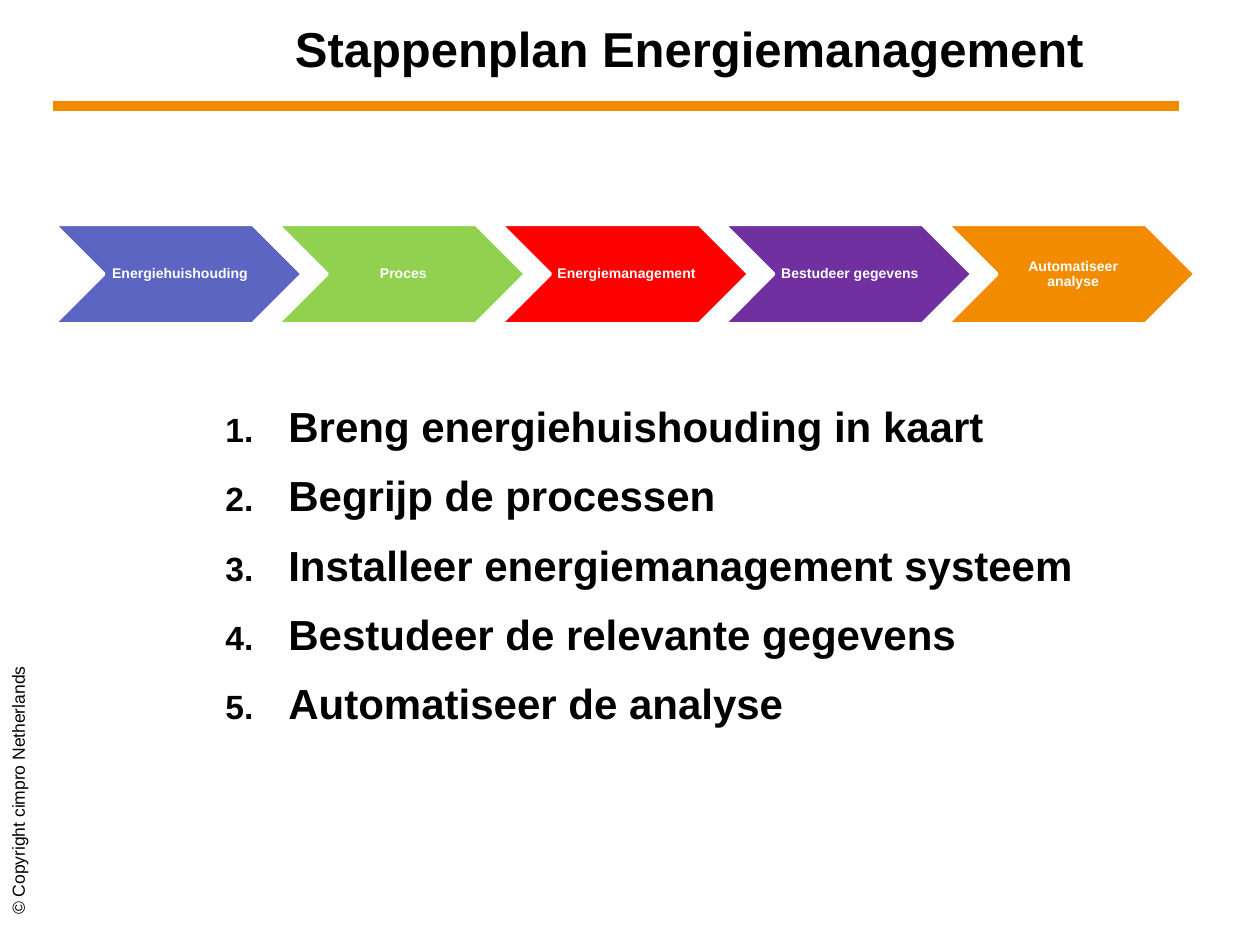
from lxml.etree import SubElement
from pptx import Presentation
from pptx.dml.color import RGBColor
from pptx.enum.shapes import MSO_CONNECTOR, MSO_SHAPE
from pptx.enum.text import MSO_ANCHOR as ANCHOR, MSO_AUTO_SIZE as AUTO_SIZE, PP_ALIGN as ALIGN
from pptx.oxml.ns import qn
from pptx.util import Inches, Pt

SLIDE_WIDTH, SLIDE_HEIGHT = Inches(10), Inches(7.5)
COLUMN, ROW = SLIDE_WIDTH / 100, SLIDE_HEIGHT / 75

BLACK = RGBColor(0x00, 0x00, 0x00)
WHITE = RGBColor(0xFF, 0xFF, 0xFF)
BLUE = RGBColor(0x5C, 0x65, 0xC2)
GREEN = RGBColor(0x92, 0xD0, 0x50)
RED = RGBColor(0xFF, 0x00, 0x00)
PURPLE = RGBColor(0x70, 0x30, 0xA0)
ORANGE = RGBColor(0xF2, 0x8B, 0x00)

PHASES = [
    ("Energiehuishouding", BLUE),
    ("Proces", GREEN),
    ("Energiemanagement", RED),
    ("Bestudeer gegevens", PURPLE),
    ("Automatiseer analyse", ORANGE),
]
STEPS = [
    "Breng energiehuishouding in kaart",
    "Begrijp de processen",
    "Installeer energiemanagement systeem",
    "Bestudeer de relevante gegevens",
    "Automatiseer de analyse",
]


def grid_box(column, row, columns, rows):
    return [round(length) for length in (column * COLUMN, row * ROW, columns * COLUMN, rows * ROW)]


def style_font(paragraph, size, color=BLACK, bold=True):
    font = paragraph.font
    font.name = "Arial"
    font.size = Pt(size)
    font.bold = bold
    font.color.rgb = color


def set_margins(text_frame, left, top, right, bottom):
    text_frame.margin_left, text_frame.margin_right = Inches(left), Inches(right)
    text_frame.margin_top, text_frame.margin_bottom = Inches(top), Inches(bottom)


def add_text(slide, box, text):
    shape = slide.shapes.add_textbox(*box)
    shape.text_frame.word_wrap = True
    shape.text_frame.text = text
    return shape


def add_rule(slide):
    left, top, width, _ = grid_box(4.2, 8.4, 89.4, 0)
    rule = slide.shapes.add_connector(MSO_CONNECTOR.STRAIGHT, left, top, left + width, top)
    rule.line.color.rgb = ORANGE
    rule.line.width = Pt(6)
    SubElement(rule._element.spPr, qn("a:effectLst"))


def add_copyright(slide):
    shape = add_text(slide, grid_box(-11.6, 59.2, 26.2, 2.8), "© Copyright cimpro Netherlands")
    shape.rotation = 270
    set_margins(shape.text_frame, 0.11, 0.05, 0.11, 0.05)
    shape.text_frame.auto_size = AUTO_SIZE.SHAPE_TO_FIT_TEXT
    style_font(shape.text_frame.paragraphs[0], 10, bold=False)


def add_title(slide):
    shape = add_text(slide, grid_box(20.8, 0.8, 67.8, 5.8), "Stappenplan Energiemanagement")
    shape.text_frame.vertical_anchor = ANCHOR.BOTTOM
    paragraph = shape.text_frame.paragraphs[0]
    paragraph.alignment = ALIGN.CENTER
    style_font(paragraph, 28)


def add_phase(slide, index, label, color):
    box = grid_box(4.3 + index * 17.72, 17.8, 19.7, 7.9)
    shape = slide.shapes.add_shape(MSO_SHAPE.CHEVRON, *box)
    shape.shadow.inherit = False
    shape.fill.solid()
    shape.fill.fore_color.rgb = color
    shape.line.color.rgb = WHITE
    shape.line.width = Pt(2)
    text_frame = shape.text_frame
    text_frame.text = label
    text_frame.word_wrap = True
    text_frame.vertical_anchor = ANCHOR.MIDDLE
    set_margins(text_frame, 0.04, 0.01, 0.01, 0.01)
    paragraph = text_frame.paragraphs[0]
    paragraph.alignment = ALIGN.CENTER
    paragraph.line_spacing = 0.9
    style_font(paragraph, 8, WHITE)


def number_paragraph(paragraph):
    properties = paragraph._p.get_or_add_pPr()
    properties.set("marL", str(Inches(0.5)))
    properties.set("indent", str(-Inches(0.5)))
    SubElement(properties, qn("a:buSzPct"), val="80000")
    SubElement(properties, qn("a:buFont"), typeface="Arial")
    SubElement(properties, qn("a:buAutoNum"), type="arabicPeriod")


def add_steps(slide):
    shape = add_text(slide, grid_box(16.9, 31.3, 70.1, 32.1), "\n".join(STEPS))
    for index, paragraph in enumerate(shape.text_frame.paragraphs):
        number_paragraph(paragraph)
        if index:
            paragraph.space_before = Pt(10.8)
        style_font(paragraph, 24)


def main():
    presentation = Presentation()
    presentation.slide_width, presentation.slide_height = SLIDE_WIDTH, SLIDE_HEIGHT
    slide = presentation.slides.add_slide(presentation.slide_layouts[6])
    add_rule(slide)
    add_copyright(slide)
    add_title(slide)
    add_steps(slide)
    for index, (label, color) in enumerate(PHASES):
        add_phase(slide, index, label, color)
    presentation.save("out.pptx")


if __name__ == "__main__":
    main()
